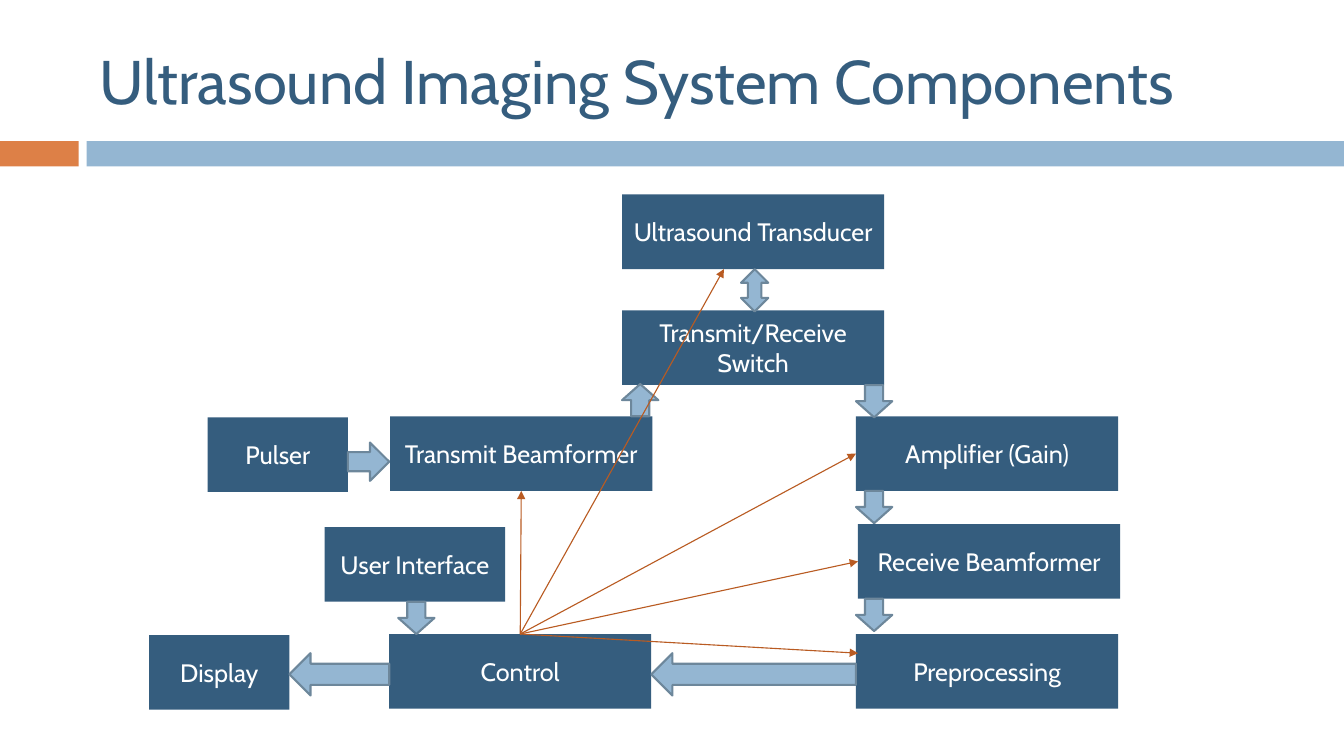
from dataclasses import dataclass

from lxml import etree
from pptx import Presentation
from pptx.dml.color import RGBColor
from pptx.enum.shapes import MSO_CONNECTOR, MSO_SHAPE
from pptx.enum.text import MSO_ANCHOR, PP_ALIGN
from pptx.oxml.ns import qn
from pptx.util import Inches, Pt

RECT = MSO_SHAPE.RECTANGLE
UP, DOWN = MSO_SHAPE.UP_ARROW, MSO_SHAPE.DOWN_ARROW
LEFT, RIGHT = MSO_SHAPE.LEFT_ARROW, MSO_SHAPE.RIGHT_ARROW
UP_DOWN = MSO_SHAPE.UP_DOWN_ARROW
STRAIGHT = MSO_CONNECTOR.STRAIGHT
MIDDLE, CENTER, ALIGN_LEFT = MSO_ANCHOR.MIDDLE, PP_ALIGN.CENTER, PP_ALIGN.LEFT
TOP_SIDE, LEFT_SIDE, BOTTOM_SIDE = 0, 1, 2


@dataclass(frozen=True)
class Theme:
    font: str = "Cabin"
    navy: str = "355D7E"
    sky: str = "94B6D2"
    orange: str = "DD8047"
    outline: str = "6D879B"
    signal: str = "B95B22"
    white: str = "FFFFFF"
    title_size: float = 44
    label_size: float = 18
    outline_width: float = 1.5
    signal_width: float = 0.79


THEME = Theme()

BOX_WIDTH, BOX_HEIGHT = 2.6, 0.74
SMALL_WIDTH = 1.39
LEFT_COLUMN, MIDDLE_COLUMN, RIGHT_COLUMN = 2.38, 4.69, 7.01

# Label: left, top, width, inside the diagram
COMPONENTS = {
    "Ultrasound Transducer": (MIDDLE_COLUMN, 0, BOX_WIDTH),
    "Transmit/Receive Switch": (MIDDLE_COLUMN, 1.15, BOX_WIDTH),
    "Pulser": (0.58, 2.21, SMALL_WIDTH),
    "Transmit Beamformer": (2.39, 2.2, BOX_WIDTH),
    "Amplifier (Gain)": (RIGHT_COLUMN, 2.2, BOX_WIDTH),
    "User Interface": (1.74, 3.3, 1.79),
    "Receive Beamformer": (7.03, 3.27, BOX_WIDTH),
    "Display": (0, 4.37, SMALL_WIDTH),
    "Control": (LEFT_COLUMN, 4.36, BOX_WIDTH),
    "Preprocessing": (RIGHT_COLUMN, 4.36, BOX_WIDTH),
}

# Kind, left, top, width, height, inside the diagram
SHORT = (0.36, 0.32)
BLOCK_ARROWS = [
    (UP_DOWN, 5.87, 0.74, 0.27, 0.42),
    (UP, MIDDLE_COLUMN, 1.88, *SHORT),
    (DOWN, RIGHT_COLUMN, 1.89, *SHORT),
    (DOWN, RIGHT_COLUMN, 2.94, *SHORT),
    (DOWN, RIGHT_COLUMN, 4.01, *SHORT),
    (DOWN, 2.47, 4.04, *SHORT),
    (RIGHT, 1.97, 2.46, 0.41, 0.38),
    (LEFT, 4.98, 4.55, 2.03, 0.42),
    (LEFT, SMALL_WIDTH, 4.55, 0.99, 0.42),
]

# Control signals: joined to a side's middle, or ending at a free point
JOINED_SIGNALS = {
    "Transmit Beamformer": BOTTOM_SIDE,
    "Amplifier (Gain)": LEFT_SIDE,
    "Receive Beamformer": LEFT_SIDE,
}
FREE_SIGNALS = [(5.7, 0.74), (7.03, 4.55)]


def color(value):
    return RGBColor.from_string(value)


def add_block(page, kind, box, fill, outline=None):
    shape = page.shapes.add_shape(kind, *(Inches(value) for value in box))
    shape.shadow.inherit = False
    shape.fill.solid()
    shape.fill.fore_color.rgb = color(fill)
    if outline:
        shape.line.color.rgb = color(outline)
        shape.line.width = Pt(THEME.outline_width)
    else:
        shape.line.fill.background()
    return shape


def write_text(shape, text, size, ink, align):
    frame = shape.text_frame
    frame.word_wrap = True
    frame.vertical_anchor = MIDDLE
    frame.text = text
    para = frame.paragraphs[0]
    para.alignment = align
    font = para.runs[0].font
    font.name, font.size = THEME.font, Pt(size)
    font.color.rgb = color(ink)


def add_signal(page, source, end):
    """Draw a thin arrow from the top of a component to a point."""
    line = page.shapes.add_connector(
        STRAIGHT, source.left, source.top, Inches(end[0]), Inches(end[1]))
    line.begin_connect(source, TOP_SIDE)
    line.line.color.rgb = color(THEME.signal)
    line.line.width = Pt(THEME.signal_width)
    etree.SubElement(line.line._get_or_add_ln(), qn("a:tailEnd"), type="triangle")
    etree.SubElement(line._element.spPr, qn("a:effectLst"))
    return line


def add_header(page, left, top, width):
    # Accent bar in two parts
    bar_top, bar_height, accent, gap = top + 1.4, 0.25, 0.78, 0.08
    bar_left = left + accent + gap
    add_block(page, RECT, (left, bar_top, accent, bar_height), THEME.orange)
    add_block(page, RECT, (bar_left, bar_top, left + width - bar_left, bar_height),
              THEME.sky)
    # Title
    title = page.shapes.add_textbox(
        Inches(left + 0.89), Inches(top + 0.25), Inches(11.89), Inches(1.08))
    write_text(title, "Ultrasound Imaging System Components",
               THEME.title_size, THEME.navy, ALIGN_LEFT)


def add_diagram(page, left, top):
    # Components
    blocks = {}
    for label, (x, y, width) in COMPONENTS.items():
        block = add_block(page, RECT, (left + x, top + y, width, BOX_HEIGHT),
                          THEME.navy)
        write_text(block, label, THEME.label_size, THEME.white, CENTER)
        blocks[label] = block

    # Data flow
    for kind, x, y, width, height in BLOCK_ARROWS:
        add_block(page, kind, (left + x, top + y, width, height),
                  THEME.sky, THEME.outline)

    # Control signals
    control = blocks["Control"]
    for label, side in JOINED_SIGNALS.items():
        signal = add_signal(page, control, (left, top))
        signal.end_connect(blocks[label], side)
    for x, y in FREE_SIGNALS:
        add_signal(page, control, (left + x, top + y))


def main():
    deck = Presentation()
    deck.slide_width, deck.slide_height = Inches(13.33), Inches(7.5)
    page = deck.slides.add_slide(deck.slide_layouts[6])
    add_header(page, 0, 0, 13.33)
    add_diagram(page, 1.48, 1.93)
    deck.save("out.pptx")


if __name__ == "__main__":
    main()
